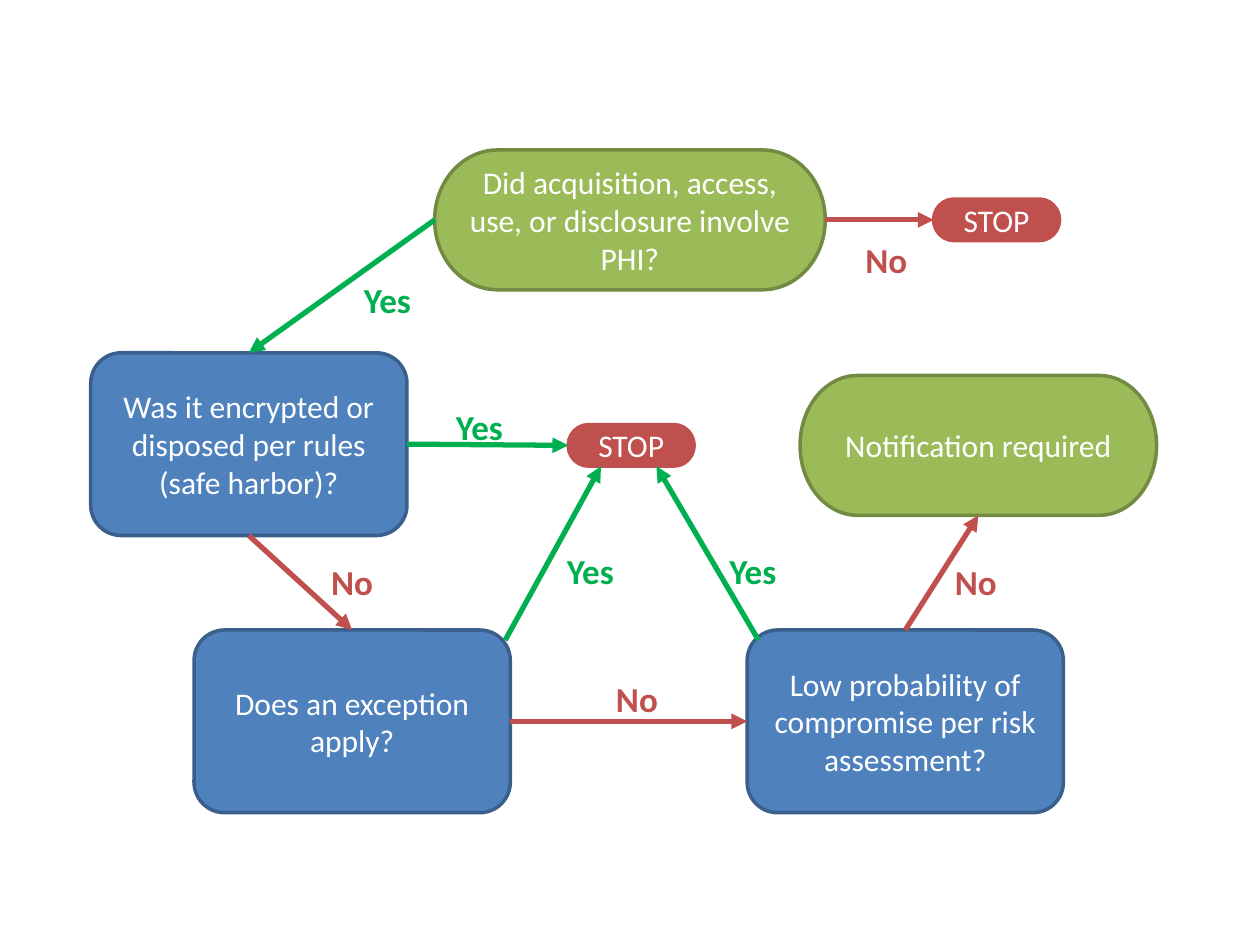
from lxml.etree import SubElement
from pptx import Presentation
from pptx.dml.color import RGBColor
from pptx.enum.shapes import MSO_CONNECTOR as Wire, MSO_SHAPE as Form
from pptx.enum.text import MSO_ANCHOR as Anchor, MSO_AUTO_SIZE as Fit, PP_ALIGN as Align
from pptx.oxml.ns import qn
from pptx.util import Inches, Pt

GREEN, RED, WHITE = "00B050", "C0504D", "FFFFFF"
TOP, LEFT, BOTTOM, RIGHT = range(4)


def tint(code):
    return RGBColor.from_string(code)


class Chart:
    font = "Calibri"
    answers = {"Yes": (GREEN, 0.69), "No": (RED, 0.58)}

    def __init__(self, slide):
        self.slide = slide

    def letter(self, shape, text, size, color, bold=False):
        frame = shape.text_frame
        frame.text = text
        font = frame.paragraphs[0].runs[0].font
        font.name, font.size, font.bold = self.font, Pt(size), bold
        font.color.rgb = tint(color)
        return frame

    def node(self, form, text, box, fill, edge):
        shape = self.slide.shapes.add_shape(form, *map(Inches, box))
        shape.shadow.inherit = False
        shape.fill.solid()
        shape.fill.fore_color.rgb = tint(fill)
        shape.line.color.rgb = tint(edge)
        shape.line.width = Pt(2)
        frame = self.letter(shape, text, 18, WHITE)
        frame.word_wrap = True
        frame.vertical_anchor = Anchor.MIDDLE
        frame.paragraphs[0].alignment = Align.CENTER
        return shape

    def step(self, text, left, top):
        return self.node(Form.FLOWCHART_ALTERNATE_PROCESS, text,
                         (left, top, 2.51, 1.45), "4F81BD", "3A5F8C")

    def end(self, text, left, top, width):
        return self.node(Form.FLOWCHART_TERMINATOR, text,
                         (left, top, width, 1.11), "9BBB59", "738A42")

    def stop(self, left, top):
        return self.node(Form.FLOWCHART_TERMINATOR, "STOP",
                         (left, top, 1, 0.33), RED, RED)

    def label(self, text, left, top):
        color, width = self.answers[text]
        box = self.slide.shapes.add_textbox(*map(Inches, (left, top, width, 0.44)))
        frame = self.letter(box, text, 20, color, True)
        frame.word_wrap = False
        frame.auto_size = Fit.SHAPE_TO_FIT_TEXT

    def arrow(self, color, start=(0, 0), stop=(0, 0)):
        line = self.slide.shapes.add_connector(
            Wire.STRAIGHT, *map(Inches, (*start, *stop)))
        line.line.color.rgb = tint(color)
        line.line.width = Pt(3)
        SubElement(line.get_or_add_ln(), qn("a:tailEnd"), type="triangle")
        SubElement(line.element.spPr, qn("a:effectLst"))
        return line

    def link(self, color, source, out, target, into):
        line = self.arrow(color)
        line.begin_connect(source, out)
        line.end_connect(target, into)


def main():
    deck = Presentation()
    deck.slide_width, deck.slide_height = Inches(10), Inches(7.5)
    chart = Chart(deck.slides.add_slide(deck.slide_layouts[6]))

    safe = chart.step("Was it encrypted or disposed per rules (safe harbor)?", 0.72, 2.8)
    risk = chart.step("Low probability of compromise per risk assessment?", 5.93, 5)
    exempt = chart.step("Does an exception apply?", 1.54, 5)
    start = chart.end("Did acquisition, access, use, or disclosure involve PHI?", 3.45, 1.19, 3.1)
    notice = chart.end("Notification required", 6.35, 2.98, 2.83)
    halt = chart.stop(4.51, 3.37)
    leave = chart.stop(7.41, 1.58)

    for route in (
        (GREEN, start, LEFT, safe, TOP),
        (RED, start, RIGHT, leave, LEFT),
        (GREEN, safe, RIGHT, halt, LEFT),
        (RED, safe, BOTTOM, exempt, TOP),
        (RED, exempt, RIGHT, risk, LEFT),
        (RED, risk, TOP, notice, BOTTOM),
    ):
        chart.link(*route)
    chart.arrow(GREEN, (4.01, 5.08), (4.77, 3.7))
    chart.arrow(GREEN, (6.02, 5.08), (5.21, 3.7))

    for left, top in ((2.79, 2.16), (3.52, 3.17), (4.4, 4.31), (5.69, 4.31)):
        chart.label("Yes", left, top)
    for left, top in ((6.77, 1.84), (2.53, 4.4), (4.79, 5.33), (7.48, 4.4)):
        chart.label("No", left, top)

    deck.save("out.pptx")


if __name__ == "__main__":
    main()
